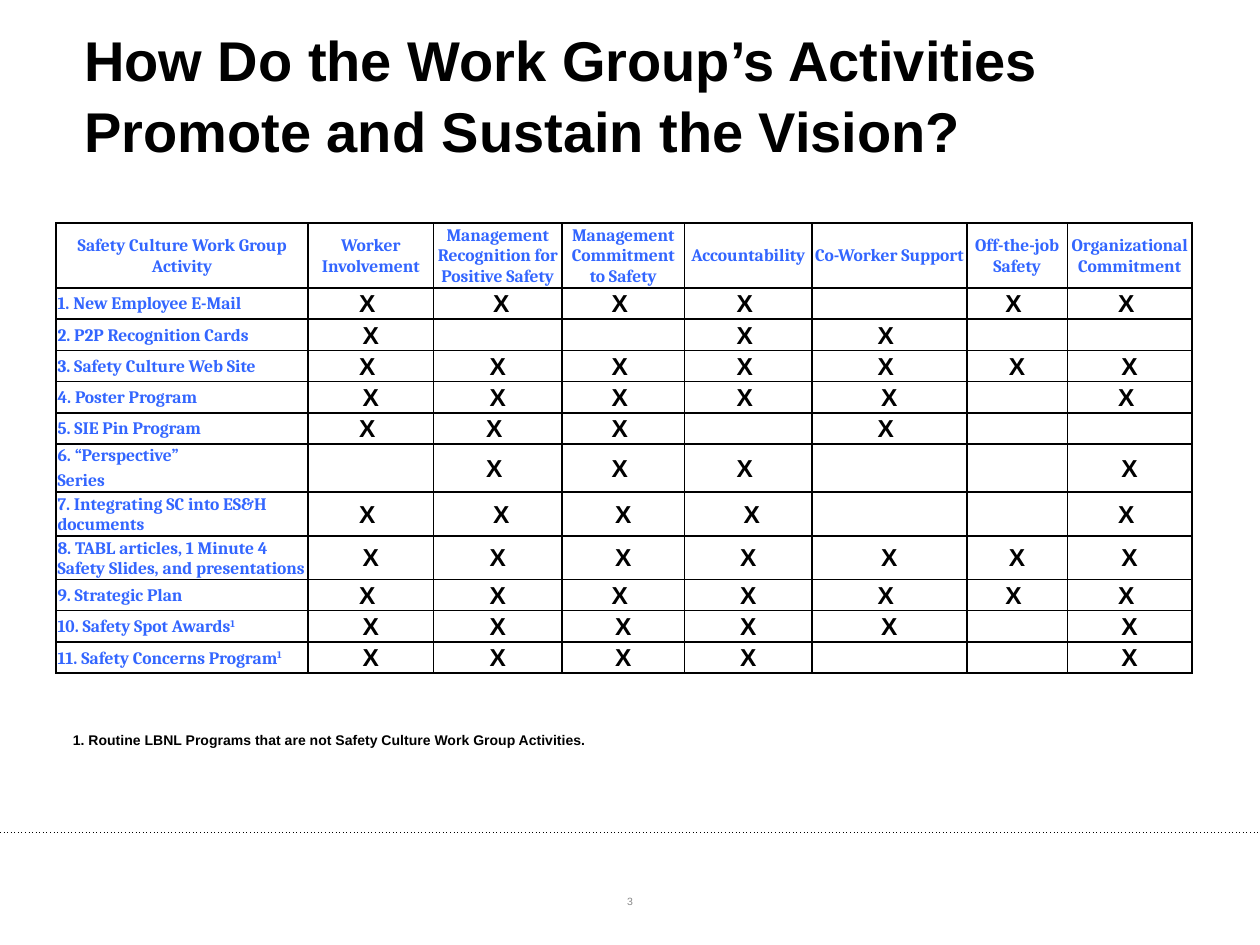
from dataclasses import dataclass

from lxml.etree import SubElement
from pptx import Presentation
from pptx.dml.color import RGBColor
from pptx.enum.shapes import MSO_CONNECTOR
from pptx.enum.text import MSO_ANCHOR as Anchor, PP_ALIGN as Align
from pptx.oxml.ns import qn
from pptx.util import Cm, Pt


@dataclass(frozen=True)
class Theme:
    """Colours, fonts and type sizes of the slide."""
    ink: str = "000000"
    label: str = "3366FF"
    muted: str = "898989"
    sans: str = "Arial"
    serif: str = "Cambria"
    title: int = 32
    mark: int = 14
    cell: int = 10
    note: int = 8
    page: int = 6


THEME = Theme()
TITLE = "How Do the Work Group’s Activities Promote and Sustain the Vision?"
FOOTNOTE = "1. Routine LBNL Programs that are not Safety Culture Work Group Activities."
COLUMNS = [
    ("Safety Culture Work Group Activity", 5.08),
    ("Worker Involvement", 2.53),
    ("Management Recognition for Positive Safety", 2.59),
    ("Management Commitment to Safety", 2.47),
    ("Accountability", 2.57),
    ("Co-Worker Support", 3.12),
    ("Off-the-job Safety", 2.03),
    ("Organizational Commitment", 2.51),
]
HEADER_HEIGHT, SINGLE, DOUBLE = 1.25, 0.63, 0.84
ACTIVITIES = [
    ("1. New Employee E-Mail", "<><<.<<", SINGLE),
    ("2. P2P Recognition Cards", "X..<<..", SINGLE),
    ("3. Safety Culture Web Site", "<X<<<XX", SINGLE),
    ("4. Poster Program", "XX<<X.<", SINGLE),
    ("5. SIE Pin Program", "<<<.<..", SINGLE),
    ("6. “Perspective”", ".<<<..X", 0.46),
    ("Series", ".......", 0.51),
    ("7. Integrating SC into ES&H documents", "<>X>..<", DOUBLE),
    ("8. TABL articles, 1 Minute 4 Safety Slides, and presentations", "XXXXXXX", DOUBLE),
    ("9. Strategic Plan", "<X<X<<<", SINGLE),
    ("10. Safety Spot Awards^1", "XXXXX.X", SINGLE),
    ("11. Safety Concerns Program^1", "XXXX..X", SINGLE),
]
SPLIT_ROW = 6
CELL_INSET, MARK_SHIFT = 0.03, 0.14


def add_run(paragraph, text, size, color, face=THEME.sans, bold=True):
    """Add one styled run to a paragraph and return it."""
    run = paragraph.add_run()
    run.text = text
    run.font.size, run.font.name, run.font.bold = Pt(size), face, bold
    run.font.color.rgb = RGBColor.from_string(color)
    return run


def add_text(slide, box, text, size, color, bold=True, align=Align.LEFT,
             anchor=Anchor.MIDDLE, spacing=1.0):
    """Place a wrapped one-paragraph text box in the given box."""
    frame = slide.shapes.add_textbox(*map(Cm, box)).text_frame
    frame.word_wrap, frame.vertical_anchor = True, anchor
    paragraph = frame.paragraphs[0]
    paragraph.alignment, paragraph.line_spacing = align, spacing
    add_run(paragraph, text, size, color, bold=bold)


def set_borders(cell, hidden=""):
    """Draw one-point borders on a cell, except on the hidden sides."""
    properties = cell._tc.get_or_add_tcPr()
    for side in "LRTB":
        border = SubElement(properties, qn(f"a:ln{side}"), w=str(Pt(1)))
        if side in hidden:
            SubElement(border, qn("a:noFill"))
        else:
            fill = SubElement(border, qn("a:solidFill"))
            SubElement(fill, qn("a:srgbClr"), val=THEME.ink)


def format_cell(cell, hidden=""):
    """Give a cell its borders, clear fill and narrow insets."""
    set_borders(cell, hidden)
    cell.fill.background()
    cell.vertical_anchor = Anchor.MIDDLE
    cell.margin_left = cell.margin_right = cell.margin_top = Cm(CELL_INSET)
    cell.margin_bottom = 0


def fill_label(cell, label, align=Align.LEFT):
    """Write a label, raising whatever follows a caret."""
    paragraph = cell.text_frame.paragraphs[0]
    paragraph.alignment = align
    name, _, reference = label.partition("^")
    add_run(paragraph, name, THEME.cell, THEME.label, THEME.serif)
    if reference:
        raised = add_run(paragraph, reference, THEME.cell, THEME.label, THEME.serif)
        raised.font._element.set("baseline", "30000")


def fill_mark(cell, mark):
    """Write an X that is centred or leans to a side, or leave the cell empty."""
    paragraph = cell.text_frame.paragraphs[0]
    paragraph.alignment = Align.CENTER
    if mark == ".":
        SubElement(paragraph._p, qn("a:endParaRPr"), sz=str(THEME.cell * 100))
        return
    add_run(paragraph, "X", THEME.mark, THEME.ink)
    if mark == "<":
        cell.margin_right = Cm(CELL_INSET + MARK_SHIFT)
    elif mark == ">":
        cell.margin_left = Cm(CELL_INSET + MARK_SHIFT)


def add_matrix(slide, left, top):
    """Build the table of activities against safety themes."""
    heights = [HEADER_HEIGHT] + [height for _, _, height in ACTIVITIES]
    widths = [width for _, width in COLUMNS]
    matrix = slide.shapes.add_table(len(heights), len(widths), Cm(left), Cm(top),
                                    Cm(sum(widths)), Cm(sum(heights))).table
    matrix.first_row = matrix.horz_banding = False
    for column, width in zip(matrix.columns, widths):
        column.width = Cm(width)
    for row, height in zip(matrix.rows, heights):
        row.height = Cm(height)
    for index, (heading, _) in enumerate(COLUMNS):
        format_cell(matrix.cell(0, index))
        fill_label(matrix.cell(0, index), heading, Align.CENTER)
    open_sides = {SPLIT_ROW: "B", SPLIT_ROW + 1: "T"}
    for row, (activity, marks, _) in enumerate(ACTIVITIES, 1):
        format_cell(matrix.cell(row, 0), open_sides.get(row, ""))
        fill_label(matrix.cell(row, 0), activity)
        for column, mark in enumerate(marks, 1):
            format_cell(matrix.cell(row, column))
            fill_mark(matrix.cell(row, column), mark)
    for column in range(1, len(widths)):
        matrix.cell(SPLIT_ROW, column).merge(matrix.cell(SPLIT_ROW + 1, column))


def add_footer(slide, top, width):
    """Draw the dotted rule across the slide and the page number below it."""
    rule = slide.shapes.add_connector(MSO_CONNECTOR.STRAIGHT, 0, Cm(top), Cm(width), Cm(top))
    rule.line.color.rgb = RGBColor.from_string(THEME.ink)
    rule.line.width = Pt(0.5)
    properties = rule._element.spPr
    SubElement(properties.find(qn("a:ln")), qn("a:prstDash"), val="dot")
    SubElement(properties, qn("a:effectLst"))
    page_width = 5.92
    add_text(slide, ((width - page_width) / 2, top + 0.86, page_width, 1.02), "3",
             THEME.page, THEME.muted, bold=False, align=Align.CENTER)


def main():
    """Build the slide and save it."""
    deck = Presentation()
    deck.slide_width, deck.slide_height = Cm(25.4), Cm(19.05)
    slide = deck.slides.add_slide(deck.slide_layouts[6])
    add_footer(slide, 16.79, 25.4)
    add_text(slide, (1.45, 0.28, 22.99, 3.18), TITLE, THEME.title, THEME.ink, spacing=1.06)
    add_matrix(slide, 1.13, 4.5)
    add_text(slide, (1.22, 14.63, 11.46, 0.61), FOOTNOTE, THEME.note, THEME.ink,
             anchor=Anchor.TOP)
    deck.save("out.pptx")


if __name__ == "__main__":
    main()
